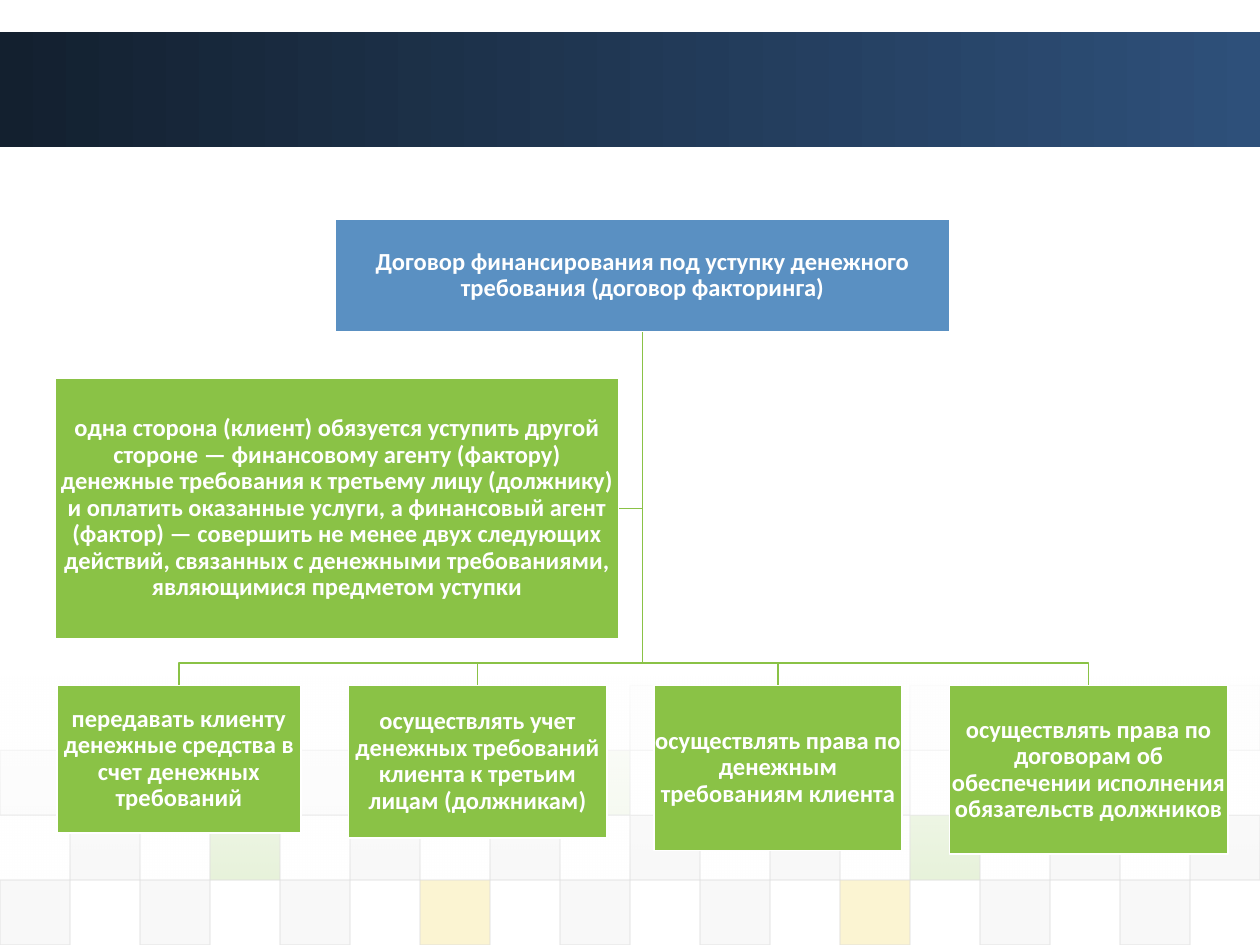
from pptx import Presentation
from pptx.dml.color import RGBColor
from pptx.enum.shapes import MSO_SHAPE
from pptx.enum.text import MSO_ANCHOR, PP_ALIGN
from pptx.oxml.ns import qn
from pptx.util import Inches, Pt
from lxml.etree import SubElement

WHITE = RGBColor(0xFF, 0xFF, 0xFF)
GREEN = RGBColor(0x8A, 0xC2, 0x46)
BLUE = RGBColor(0x5A, 0x90, 0xC2)
YELLOW = RGBColor(0xEF, 0xC8, 0x21)
GREY = RGBColor(0xDD, 0xDD, 0xDD)
PALE_GREY = RGBColor(0xEA, 0xEA, 0xEA)
NAVY_DARK = RGBColor(0x13, 0x20, 0x2F)
NAVY = RGBColor(0x2E, 0x50, 0x7A)

WIDTH, HEIGHT = 10, 7.5
FONT, FONT_SIZE = "Calibri", 14

TILE_COLOURS = {"D": GREY, "E": PALE_GREY, "G": GREEN, "Y": YELLOW}
TILE_ROWS = [
    (5, ".Y.E.E.Y.D.Y.E.G.E"),
    (10, "D...D...G...D....."),
    (20, ".D.G.D.D.D.D.G.D.D"),
    (20, "D.D.D.Y.D.D.Y.D.D."),
]
TILE_WIDTH = WIDTH / 18
TILE_HEIGHT = 0.515
TILE_TOP = HEIGHT - len(TILE_ROWS) * TILE_HEIGHT

ROOT = ("Договор финансирования под уступку денежного требования (договор факторинга)",
        2.66, 1.74, 4.88, 0.89)
PARTIES = ("одна сторона (клиент) обязуется уступить другой стороне — финансовому агенту "
           "(фактору) денежные требования к третьему лицу (должнику) и оплатить оказанные "
           "услуги, а финансовый агент (фактор) — совершить не менее двух следующих действий, "
           "связанных с денежными требованиями, являющимися предметом уступки",
           0.44, 3, 4.47, 2.07)
ACTION_TOP, ACTION_GAP = 5.44, 0.375
ACTIONS = [
    ("передавать клиенту денежные средства в счет денежных требований", 1.94, 1.17),
    ("осуществлять учет денежных требований клиента к третьим лицам (должникам)", 2.05, 1.21),
    ("осуществлять права по денежным требованиям клиента", 1.97, 1.31),
    ("осуществлять права по договорам об обеспечении исполнения обязательств должников",
     2.21, 1.34),
]
BRANCH_Y = 5.26


def add_rectangle(slide, left, top, width, height):
    shape = slide.shapes.add_shape(MSO_SHAPE.RECTANGLE, Inches(left), Inches(top),
                                   Inches(width), Inches(height))
    shape.shadow.inherit = False
    shape.line.fill.background()
    return shape


def set_opacity(shape, *percents):
    colours = list(shape._element.spPr.iter(qn("a:srgbClr")))
    for colour, percent in zip(colours, percents):
        SubElement(colour, qn("a:alpha")).set("val", str(percent * 1000))


def set_gradient(shape, colours, angle):
    shape.fill.gradient()
    shape.fill.gradient_angle = angle
    for position, (stop, colour) in enumerate(zip(shape.fill.gradient_stops, colours)):
        stop.position = position
        stop.color.rgb = colour


def set_line(shape, colour, width):
    shape.line.color.rgb = colour
    shape.line.width = Pt(width)


def add_background(slide):
    band = add_rectangle(slide, 0, 0.25, WIDTH, 0.92)
    set_gradient(band, (NAVY_DARK, NAVY), 0)
    for row, (opacity, pattern) in enumerate(TILE_ROWS):
        for column, key in enumerate(pattern):
            if key in TILE_COLOURS:
                tile = add_rectangle(slide, column * TILE_WIDTH, TILE_TOP + row * TILE_HEIGHT,
                                     TILE_WIDTH, TILE_HEIGHT)
                tile.fill.solid()
                tile.fill.fore_color.rgb = TILE_COLOURS[key]
                set_line(tile, GREY, 0.75)
                set_opacity(tile, opacity, 60)
    veil = add_rectangle(slide, 0, 5.37, WIDTH, 1.62)
    set_gradient(veil, (WHITE, WHITE), 270)
    set_opacity(veil, 90, 0)


def add_box(slide, box, colour):
    text, *position = box
    shape = add_rectangle(slide, *position)
    shape.fill.solid()
    shape.fill.fore_color.rgb = colour
    set_line(shape, WHITE, 1)
    frame = shape.text_frame
    frame.text = text
    frame.word_wrap = True
    frame.vertical_anchor = MSO_ANCHOR.MIDDLE
    frame.margin_left = frame.margin_right = Inches(0.01)
    frame.margin_top = frame.margin_bottom = Inches(0.01)
    paragraph = frame.paragraphs[0]
    paragraph.alignment = PP_ALIGN.CENTER
    paragraph.line_spacing = 0.9
    font = paragraph.runs[0].font
    font.name, font.size, font.bold = FONT, Pt(FONT_SIZE), True
    font.color.rgb = WHITE


def add_branch(slide, points):
    start, *rest = [(Inches(x), Inches(y)) for x, y in points]
    builder = slide.shapes.build_freeform(*start)
    builder.add_line_segments(rest, close=False)
    branch = builder.convert_to_shape()
    branch.shadow.inherit = False
    branch.fill.background()
    set_line(branch, GREEN, 1)


def add_diagram(slide):
    _, left, top, width, height = ROOT
    trunk_x, trunk_top = left + width / 2, top + height
    _, left, top, width, height = PARTIES
    middle = top + height / 2
    add_branch(slide, [(trunk_x, trunk_top), (trunk_x, middle), (left + width, middle)])

    boxes = []
    left = 0.45
    for text, width, height in ACTIONS:
        boxes.append((text, left, ACTION_TOP, width, height))
        centre = left + width / 2
        add_branch(slide, [(trunk_x, trunk_top), (trunk_x, BRANCH_Y),
                           (centre, BRANCH_Y), (centre, ACTION_TOP)])
        left += width + ACTION_GAP

    add_box(slide, ROOT, BLUE)
    for box in [*boxes, PARTIES]:
        add_box(slide, box, GREEN)


def main():
    presentation = Presentation()
    presentation.slide_width = Inches(WIDTH)
    presentation.slide_height = Inches(HEIGHT)
    slide = presentation.slides.add_slide(presentation.slide_layouts[6])
    add_background(slide)
    add_diagram(slide)
    presentation.save("out.pptx")


if __name__ == "__main__":
    main()
